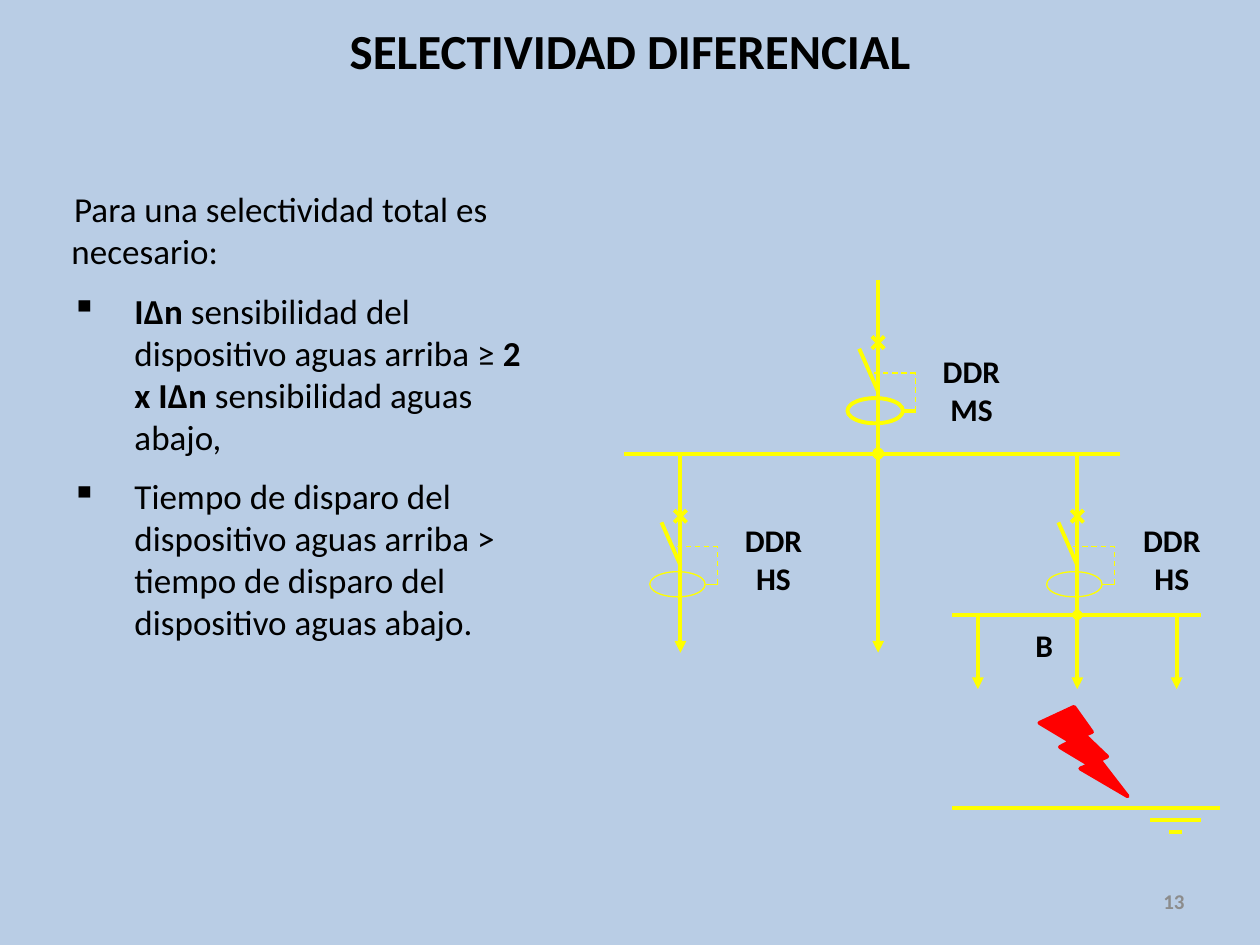
"""Build the slide on differential selectivity with its one-line diagram."""
from pptx import Presentation
from pptx.dml.color import RGBColor
from pptx.enum.dml import MSO_LINE as Dash
from pptx.enum.shapes import MSO_CONNECTOR as Link, MSO_SHAPE as Kind
from pptx.enum.text import MSO_ANCHOR as Anchor, PP_ALIGN as Align
from pptx.oxml.ns import qn
from pptx.util import Pt
from lxml.etree import SubElement as Sub

BACK = RGBColor(0xB9, 0xCD, 0xE5)
WIRE = RGBColor(0xFF, 0xFF, 0x00)
FAULT = RGBColor(0xFF, 0x00, 0x00)
INK = RGBColor(0x00, 0x00, 0x00)
GRAY = RGBColor(0x8C, 0x8C, 0x8C)
THICK, THIN = 2.25, 0.75
LEFT, MAIN, RIGHT = 388.8, 501.8, 615.6
BUS, SUB_BUS = 259.2, 351.4


def wire(slide, start, end, width=THICK, dash=False, tip=None):
    line = slide.shapes.add_connector(Link.STRAIGHT, *map(Pt, start + end))
    line.line.color.rgb = WIRE
    line.line.width = Pt(width)
    if dash:
        line.line.dash_style = Dash.DASH
    if tip:
        Sub(line.line._ln, qn("a:tailEnd"), type=tip)
    Sub(line._element.spPr, qn("a:effectLst"))


def solid(slide, kind, box, color, width, fill=None):
    shape = slide.shapes.add_shape(kind, *map(Pt, box))
    shape.shadow.inherit = False
    shape.line.color.rgb = color
    shape.line.width = Pt(width)
    if fill is None:
        shape.fill.background()
    else:
        shape.fill.solid()
        shape.fill.fore_color.rgb = fill


def style(run, size, bold, color=INK):
    run.font.name = "Calibri"
    run.font.size = Pt(size)
    run.font.bold = bold
    run.font.color.rgb = color


def frame(slide, box, anchor=Anchor.TOP):
    text = slide.shapes.add_textbox(*map(Pt, box)).text_frame
    text.word_wrap = True
    text.vertical_anchor = anchor
    return text


def label(slide, box, words, size, align, color=INK, anchor=Anchor.TOP):
    text = frame(slide, box, anchor)
    text.text = words
    for para in text.paragraphs:
        para.alignment = align
        if len(text.paragraphs) > 1:
            para.line_spacing = 0.6
            para.space_before = Pt(size / 2)
        for run in para.runs:
            style(run, size, True, color)


def notes(slide, box, paras):
    text = frame(slide, box)
    for i, (mark, parts) in enumerate(paras):
        para = text.add_paragraph() if i else text.paragraphs[0]
        para.space_before = Pt(10)
        props = para._p.get_or_add_pPr()
        props.set("marL", str(Pt(36 if mark else 0)))
        props.set("indent", str(Pt(-36 if mark else 1.5)))
        if mark:
            Sub(props, qn("a:buChar"), char=mark)
        for words, bold in parts:
            run = para.add_run()
            run.text = words
            style(run, 20, bold)


def breaker(slide, x, y, top, end, width):
    half = 3.5
    wire(slide, (x, top), (x, y + half))
    for side in (-half, half):
        wire(slide, (x - half, y - side), (x + half, y + side))
    wire(slide, (x, y), (x, y + 28))
    wire(slide, (x, y + 28), (x, end), tip="triangle")
    wire(slide, (x, y + 28), (x - 10.8, y + half))
    solid(slide, Kind.OVAL, (x - 17.5, y + 31.7, 31.7, 14.4), WIRE, width)
    wire(slide, (x + 14.2, y + 38.9), (x + 21.4, y + 38.9), width)
    wire(slide, (x + 21.4, y + 38.9), (x + 21.4, y + 17.3), THIN, True)
    wire(slide, (x + 21.4, y + 17.3), (x - half, y + 17.3), THIN, True)


def diagram(slide):
    for x, y, top, end, width in (
        (MAIN, 195.8, 159.8, 373, THICK),
        (LEFT, 295, BUS, 373, THIN),
        (RIGHT, 295, BUS, 393.8, THIN),
    ):
        breaker(slide, x, y, top, end, width)
    for x in (356.4, 640.1):
        wire(slide, (x, BUS), (MAIN, BUS), tip="oval")
    wire(slide, (544.3, SUB_BUS), (686.2, SUB_BUS))
    wire(slide, (573.1, SUB_BUS), (RIGHT, SUB_BUS), THIN, tip="oval")
    for x in (RIGHT - 56.8, RIGHT + 56.8):
        wire(slide, (x, SUB_BUS), (x, 393.8), tip="triangle")
    for x, y, end in ((544.3, 461.5, 697), (657.4, 468.4, 686.2),
                      (668.2, 475.2, 675.4)):
        wire(slide, (x, y), (end, y))
    solid(slide, Kind.LIGHTNING_BOLT, (594, 403.9, 50.4, 51.1),
          FAULT, THICK, FAULT)
    for x, y, words in ((524.9, 205.2, "DDR\nMS"), (411.8, 301.7, "DDR\nHS"),
                        (639.4, 301.7, "DDR\nHS")):
        label(slide, (x, y, 60.5, 46), words, 18, Align.CENTER)
    label(slide, (584.6, 354.2, 28.8, 28.8), "B", 18, Align.LEFT)


def main():
    deck = Presentation()
    deck.slide_width, deck.slide_height = Pt(720), Pt(540)
    slide = deck.slides.add_slide(deck.slide_layouts[6])
    slide.background.fill.solid()
    slide.background.fill.fore_color.rgb = BACK
    notes(slide, (33.8, 103.7, 280.8, 273.6), (
        (None, (("Para una selectividad total es necesario:", False),)),
        ("▪", (("IΔn", True),
               (" sensibilidad del dispositivo aguas arriba ≥ ", False),
               ("2 x IΔn ", True), ("sensibilidad aguas abajo,", False))),
        ("▪", (("Tiempo de disparo del dispositivo aguas arriba > "
                "tiempo de disparo del dispositivo aguas abajo.", False),)),
    ))
    diagram(slide)
    label(slide, (516.2, 500.4, 167.8, 28.8), "13", 12, Align.RIGHT,
          GRAY, Anchor.MIDDLE)
    label(slide, (0, 0, 720, 56.9), "SELECTIVIDAD DIFERENCIAL", 28,
          Align.CENTER, anchor=Anchor.MIDDLE)
    deck.save("out.pptx")


if __name__ == "__main__":
    main()
